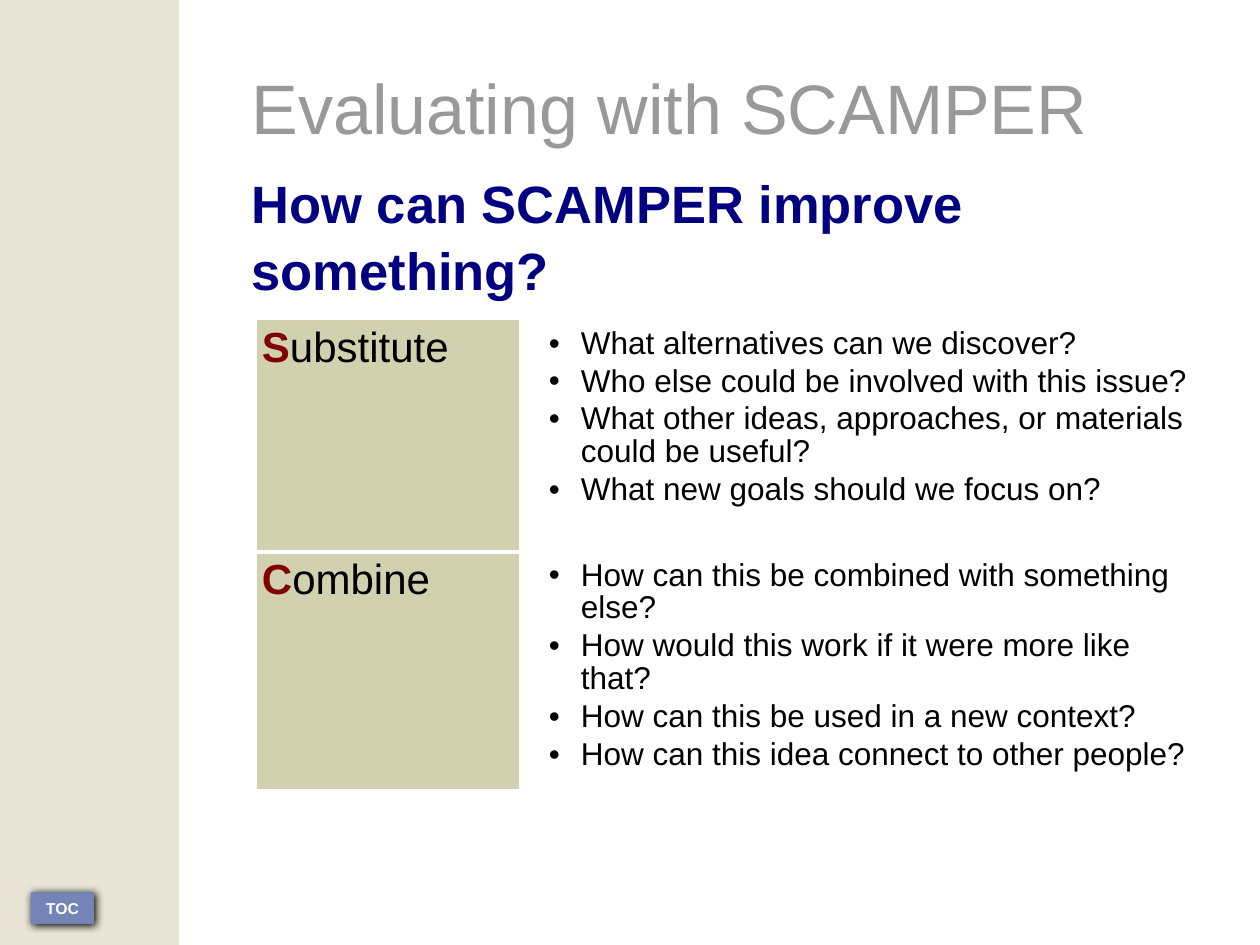
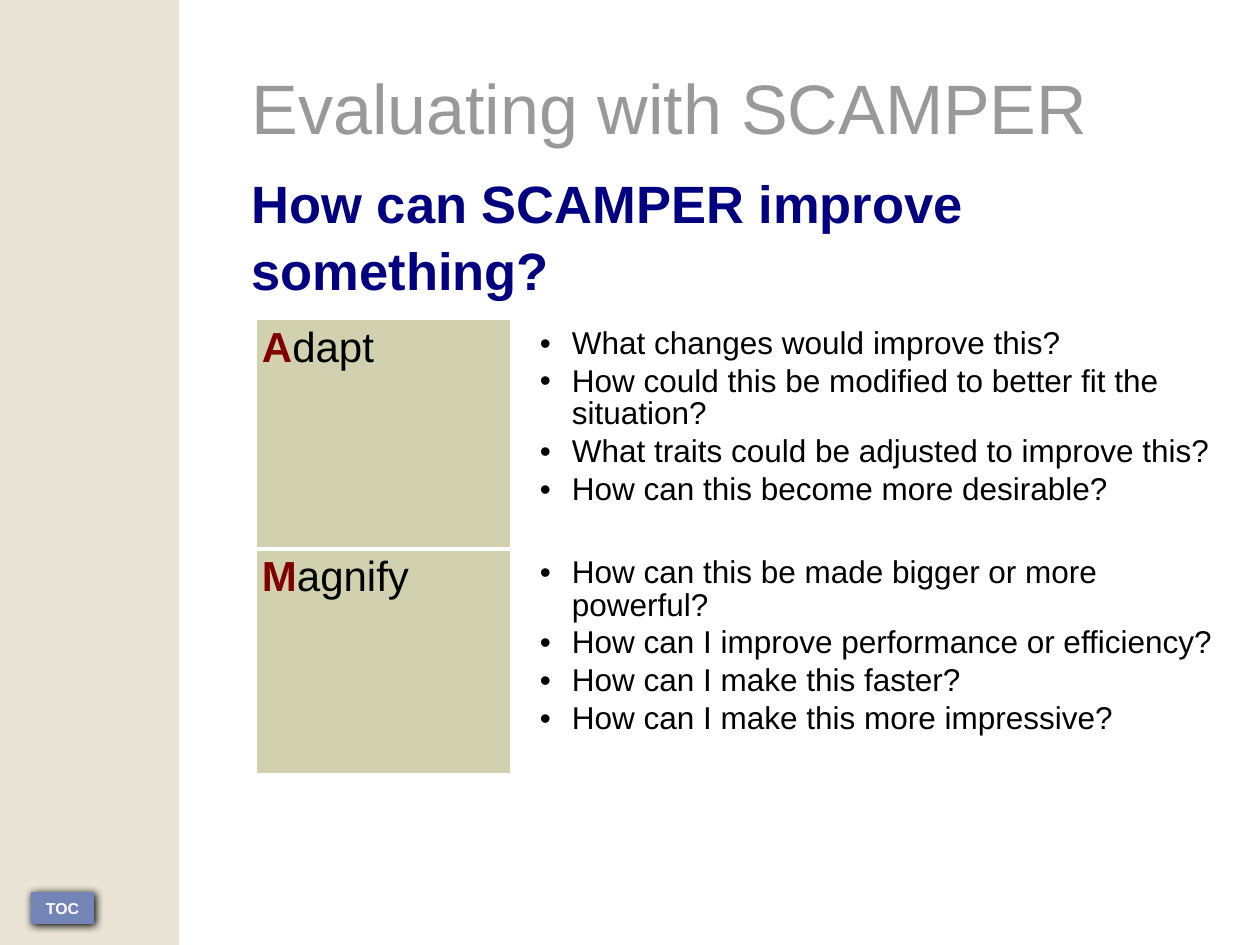
"""Build two slides that show how SCAMPER questions improve an idea."""
from dataclasses import dataclass

from lxml import etree
from pptx import Presentation
from pptx.dml.color import RGBColor
from pptx.enum.shapes import MSO_SHAPE
from pptx.enum.text import MSO_ANCHOR, MSO_AUTO_SIZE, PP_ALIGN
from pptx.oxml.ns import qn
from pptx.util import Pt

RECT = MSO_SHAPE.RECTANGLE
TOP, MIDDLE = MSO_ANCHOR.TOP, MSO_ANCHOR.MIDDLE
LEFT, CENTER = PP_ALIGN.LEFT, PP_ALIGN.CENTER
FIXED = MSO_AUTO_SIZE.NONE

SCALE = 914400 / 126
WIDE, HIGH = 1260, 945
FONT = "Arial"
PLAIN = "{2D5ABB26-0587-4C30-8999-92F81FD0307C}"

WHITE = RGBColor(0xFF, 0xFF, 0xFF)
BLACK = RGBColor(0x00, 0x00, 0x00)
GRAY = RGBColor(0x99, 0x99, 0x99)
NAVY = RGBColor(0x00, 0x00, 0x80)
MAROON = RGBColor(0x80, 0x00, 0x00)
SAND = RGBColor(0xE9, 0xE4, 0xD5)
OLIVE = RGBColor(0xD1, 0xD1, 0xB0)
BLUE = RGBColor(0x73, 0x84, 0xB6)


@dataclass(frozen=True)
class Box:
    left: int
    top: int
    width: int
    height: int


@dataclass(frozen=True)
class Step:
    name: str
    height: int
    asks: tuple[str, ...]


@dataclass(frozen=True)
class Page:
    cols: tuple[int, int]
    steps: tuple[Step, ...]


BAND = Box(0, 0, 179, HIGH)
BUTTON = Box(31, 892, 63, 32)
TITLE = Box(239, 58, 932, 96)
HEADING = Box(239, 162, 932, 144)
GRID_LEFT, GRID_TOP = 257, 320

PAGES = (
    Page((262, 678), (
        Step("Substitute", 232, (
            "What alternatives can we discover?",
            "Who else could be involved with this issue?",
            "What other ideas, approaches, or materials could be useful?",
            "What new goals should we focus on?")),
        Step("Combine", 237, (
            "How can this be combined with something else?",
            "How would this work if it were more like that?",
            "How can this be used in a new context?",
            "How can this idea connect to other people?")))),
    Page((253, 713), (
        Step("Adapt", 229, (
            "What changes would improve this?",
            "How could this be modified to better fit the situation?",
            "What traits could be adjusted to improve this?",
            "How can this become more desirable?")),
        Step("Magnify", 224, (
            "How can this be made bigger or more powerful?",
            "How can I improve performance or efficiency?",
            "How can I make this faster?",
            "How can I make this more impressive?")))),
)


def px(count: int) -> int:
    return round(count * SCALE)


def add(parent, tag: str, **attrs):
    return etree.SubElement(parent, qn(tag), attrs)


def paint(parent, color: RGBColor) -> None:
    add(add(parent, "a:solidFill"), "a:srgbClr", val=str(color))


def write(frame, text: str, *, size: int, color: RGBColor = BLACK,
          bold: bool = False, first: RGBColor | None = None,
          bullet: bool = False, align=LEFT, lines: float = 1.0,
          after: float = 0) -> None:
    para = frame.paragraphs[0]
    if para.runs:
        para = frame.add_paragraph()
    props = para._p.get_or_add_pPr()
    props.set("marL", str(px(57) if bullet else 0))
    props.set("indent", str(px(-32) if bullet else 0))
    if bullet:
        add(add(props, "a:buClr"), "a:srgbClr", val=str(BLACK))
        add(props, "a:buFont", typeface=FONT)
        add(props, "a:buChar", char="•")
    else:
        add(props, "a:buNone")
    para.alignment, para.line_spacing = align, lines
    para.space_before, para.space_after = Pt(0), Pt(after)
    parts = [(text, color, bold)]
    if first is not None:
        parts = [(text[0], first, True), (text[1:], color, bold)]
    for part, shade, heavy in parts:
        run = para.add_run()
        run.text = part
        font = run.font
        font.name, font.size, font.bold = FONT, Pt(size), heavy
        font.color.rgb = shade


def place(shape, box: Box) -> None:
    shape.left, shape.top = px(box.left), px(box.top)
    shape.width, shape.height = px(box.width), px(box.height)


def fill_holder(shape, box: Box, text: str, **style) -> None:
    place(shape, box)
    frame = shape.text_frame
    frame.auto_size, frame.vertical_anchor = FIXED, TOP
    frame.word_wrap = True
    write(frame, text, **style)


def add_block(slide, box: Box, color: RGBColor):
    shape = slide.shapes.add_shape(RECT, 0, 0, 0, 0)
    place(shape, box)
    shape.shadow.inherit = False
    shape.fill.solid()
    shape.fill.fore_color.rgb = color
    shape.line.fill.background()
    return shape


def add_button(slide) -> None:
    shape = add_block(slide, BUTTON, BLUE)
    effect = shape._element.spPr.find(qn("a:effectLst"))
    shade = add(effect, "a:outerShdw", blurRad=str(Pt(5)), dist=str(Pt(1.4)),
                dir="2700000", algn="ctr", rotWithShape="0")
    add(shade, "a:srgbClr", val=str(BLACK))
    frame = shape.text_frame
    frame.word_wrap, frame.vertical_anchor = False, MIDDLE
    write(frame, "TOC", size=9, color=WHITE, bold=True, align=CENTER)


def style_cell(cell, color: RGBColor, edge: str) -> None:
    cell.margin_left = cell.margin_right = cell.margin_bottom = px(5)
    cell.margin_top = px(8)
    line = add(cell._tc.get_or_add_tcPr(), edge, w=str(Pt(2.27)))
    paint(line, WHITE)
    cell.fill.solid()
    cell.fill.fore_color.rgb = color


def add_grid(slide, page: Page) -> None:
    height = sum(step.height for step in page.steps)
    table = slide.shapes.add_table(
        len(page.steps), len(page.cols), px(GRID_LEFT), px(GRID_TOP),
        px(sum(page.cols)), px(height)).table
    table.first_row = table.horz_banding = False
    table._tbl.tblPr.find(qn("a:tableStyleId")).text = PLAIN
    for col, width in zip(table.columns, page.cols):
        col.width = px(width)
    for index, step in enumerate(page.steps):
        table.rows[index].height = px(step.height)
        edge = "a:lnT" if index else "a:lnB"
        name, asks = table.cell(index, 0), table.cell(index, 1)
        style_cell(name, OLIVE, edge)
        style_cell(asks, WHITE, edge)
        write(name.text_frame, step.name, size=24, first=MAROON, lines=0.93)
        for ask in step.asks:
            write(asks.text_frame, ask, size=18, bullet=True, lines=0.93,
                  after=2.9)


def add_page(deck, page: Page) -> None:
    slide = deck.slides.add_slide(deck.slide_layouts[1])
    add_block(slide, BAND, SAND)
    add_button(slide)
    fill_holder(slide.shapes.title, TITLE, "Evaluating with SCAMPER",
                size=40, color=GRAY)
    fill_holder(slide.placeholders[1], HEADING,
                "How can SCAMPER improve something?",
                size=30, color=NAVY, bold=True, lines=1.05)
    add_grid(slide, page)


def main() -> None:
    deck = Presentation()
    deck.slide_width, deck.slide_height = px(WIDE), px(HIGH)
    for page in PAGES:
        add_page(deck, page)
    deck.save("out.pptx")


if __name__ == "__main__":
    main()
